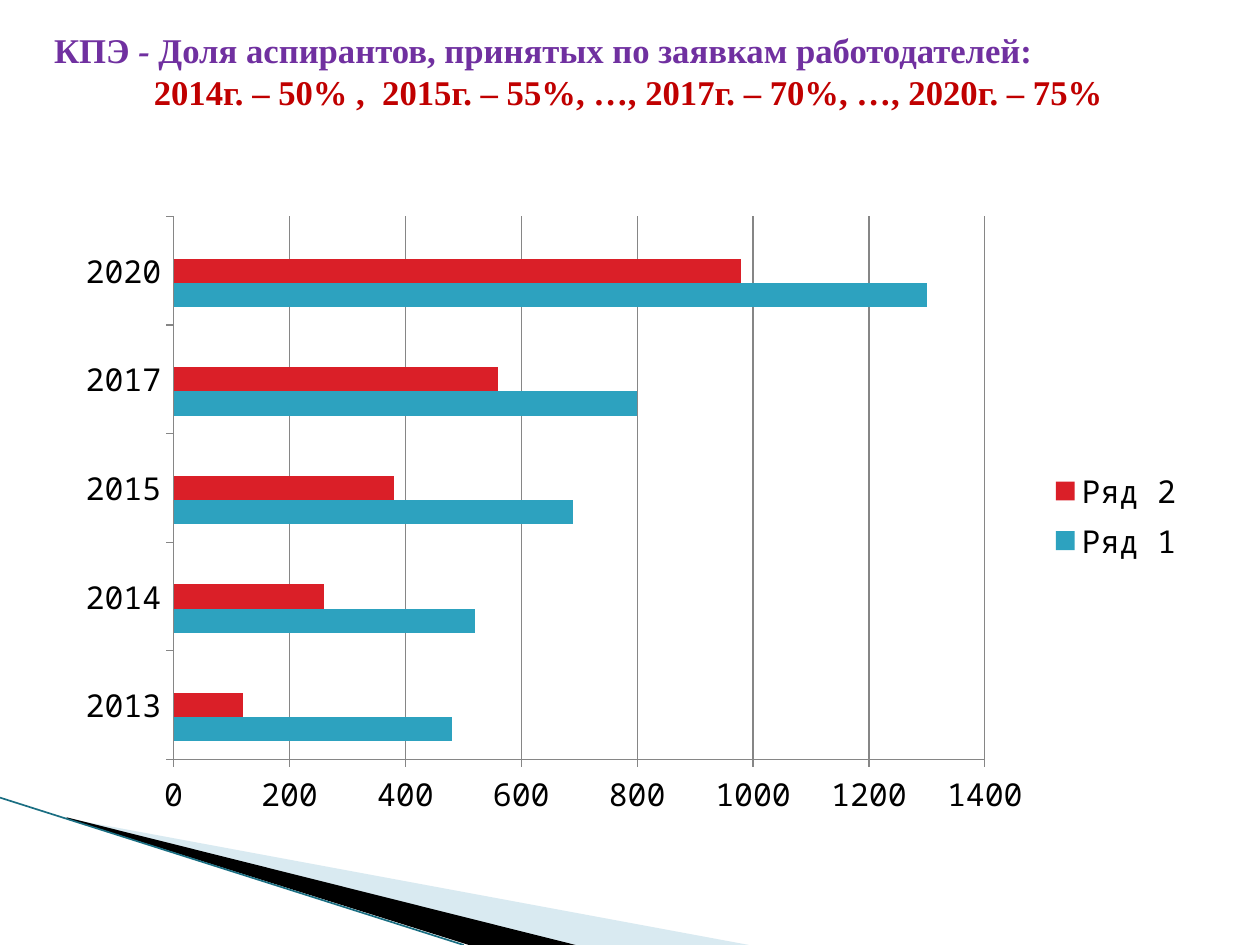
from lxml import etree
from pptx import Presentation
from pptx.chart.data import CategoryChartData
from pptx.dml.color import RGBColor
from pptx.enum import chart as ch, shapes, text
from pptx.oxml import parse_xml
from pptx.oxml.ns import nsdecls, qn
from pptx.util import Pt

PURPLE = RGBColor(0x70, 0x30, 0xA0)
DARK_RED = RGBColor(0xC0, 0x00, 0x00)
TEAL = RGBColor(0x2D, 0xA2, 0xBF)
RED = RGBColor(0xDA, 0x1F, 0x28)
ORANGE = RGBColor(0xEB, 0x64, 0x1B)
PALE_BLUE = RGBColor(0xA0, 0xCB, 0xDC)
EDGE_TEAL = RGBColor(0x1A, 0x6E, 0x82)
GREY = RGBColor(0x86, 0x86, 0x86)
BLACK = RGBColor(0, 0, 0)

# Heading lines: runs of (text, italic), colour, left indent
HEADING = [
    ([("КПЭ", False), (" - ", True),
      ("Доля аспирантов, принятых по заявкам работодателей:", False)], PURPLE, 0),
    ([("2014г. – 50% ,  2015г. – 55%, …, 2017г. – 70%, …, 2020г. – 75%", False)],
     DARK_RED, 57),
]
YEARS = ["2013", "2014", "2015", "2017", "2020"]
SERIES = [
    ("Ряд 1", [480, 520, 690, 800, 1300], TEAL),
    ("Ряд 2", [120, 260, 380, 560, 980], RED),
    ("Столбец1", [None] * 5, ORANGE),
]
# Corner wedges: outline points, fill, opacity in percent
WEDGES = [
    ([(39.6, 468.5), (428.4, 540), (328.3, 540), (39.6, 468)], PALE_BLUE, 40),
    ([(38.2, 467.3), (329, 540), (267.8, 540), (38.9, 468)], BLACK, 100),
]

prs = Presentation()
prs.slide_width, prs.slide_height = Pt(720), Pt(540)
slide = prs.slides.add_slide(prs.slide_layouts[6])

# Corner decoration
for points, colour, opacity in WEDGES:
    builder = slide.shapes.build_freeform(*points[0], scale=Pt(1))
    builder.add_line_segments(points[1:], close=True)
    wedge = builder.convert_to_shape()
    wedge.shadow.inherit = False
    wedge.fill.solid()
    wedge.fill.fore_color.rgb = colour
    wedge.line.fill.background()
    if opacity < 100:
        rgb = wedge._element.spPr.find(qn("a:solidFill"))[0]
        etree.SubElement(rgb, qn("a:alpha"), val=str(opacity * 1000))

edge = slide.shapes.add_connector(
    shapes.MSO_CONNECTOR.STRAIGHT, Pt(0), Pt(455.8), Pt(265), Pt(540))
edge.line.color.rgb = EDGE_TEAL
edge.line.width = Pt(0.95)
etree.SubElement(edge._element.spPr, qn("a:effectLst"))

# Bar chart
chart_data = CategoryChartData()
chart_data.categories = YEARS
for name, values, _ in SERIES:
    chart_data.add_series(name, values)
chart = slide.shapes.add_chart(
    ch.XL_CHART_TYPE.BAR_CLUSTERED, Pt(36), Pt(116.6), Pt(648), Pt(356.4),
    chart_data).chart
chart.has_title = False
chart.font.size = Pt(18)
chart.font.name = "Noto Sans Mono"
chart.font.color.rgb = BLACK

bars = chart.plots[0]
bars.gap_width = 150
bars.vary_by_categories = False
for series, (_, _, colour) in zip(bars.series, SERIES):
    series.format.fill.solid()
    series.format.fill.fore_color.rgb = colour
    series.invert_if_negative = False

chart.value_axis.has_major_gridlines = True
chart.value_axis.major_gridlines.format.line.color.rgb = GREY
for axis in (chart.category_axis, chart.value_axis):
    axis.format.line.color.rgb = GREY
    axis.major_tick_mark = ch.XL_TICK_MARK.OUTSIDE

# Legend, without an entry for the empty series
chart.has_legend = True
chart.legend.position = ch.XL_LEGEND_POSITION.RIGHT
chart.legend.include_in_layout = False
chart.legend._element.find(qn("c:legendPos")).addnext(parse_xml(
    f'<c:legendEntry {nsdecls("c")}><c:idx val="0"/><c:delete val="1"/></c:legendEntry>'))

# Heading
heading = slide.shapes.add_textbox(Pt(23.8), Pt(16.5), Pt(684), Pt(81)).text_frame
heading.word_wrap = True
heading.vertical_anchor = text.MSO_ANCHOR.TOP
heading.margin_top = heading.margin_bottom = 0
for i, (runs, colour, indent) in enumerate(HEADING):
    line = heading.paragraphs[0] if i == 0 else heading.add_paragraph()
    line._p.get_or_add_pPr().set("marL", str(Pt(indent)))
    line.line_spacing = Pt(24)
    line.font.size = Pt(19.8)
    line.font.name = "Times New Roman"
    line.font.bold = True
    line.font.color.rgb = colour
    for words, italic in runs:
        run = line.add_run()
        run.text = words
        if italic:
            run.font.italic = True

prs.save("out.pptx")
